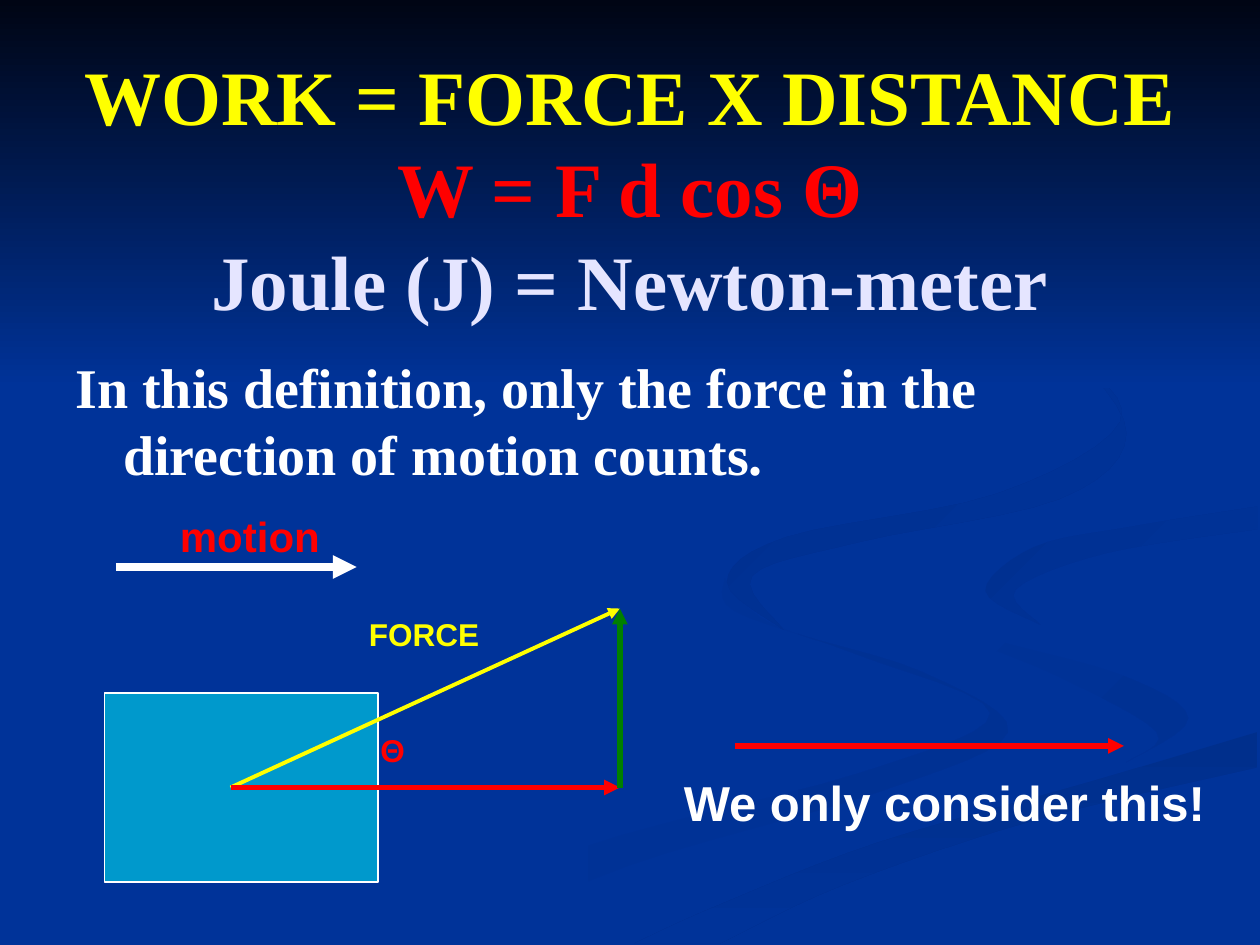
from lxml import etree
from pptx import Presentation
from pptx.dml.color import RGBColor
from pptx.enum.shapes import MSO_CONNECTOR, MSO_SHAPE
from pptx.enum.text import MSO_ANCHOR, MSO_AUTO_SIZE, PP_ALIGN
from pptx.oxml.ns import qn
from pptx.util import Pt

STRAIGHT = MSO_CONNECTOR.STRAIGHT
RECTANGLE = MSO_SHAPE.RECTANGLE
MIDDLE, TOP = MSO_ANCHOR.MIDDLE, MSO_ANCHOR.TOP
FIT_NONE = MSO_AUTO_SIZE.NONE
CENTER, LEFT = PP_ALIGN.CENTER, PP_ALIGN.LEFT

PX = 9144
WIDTH, HEIGHT = 1000, 750
CURVE_STEPS = 6
SERIF, SANS = "Times New Roman", "Arial"
BLUE, RED, YELLOW, WHITE, GREEN = "003399", "FF0000", "FFFF00", "FFFFFF", "008000"

TITLE_BOX = (50, 30, 900, 237)
TITLE_LINES = [
    ("WORK = FORCE X DISTANCE", YELLOW),
    ("W = F d cos Θ", RED),
    ("Joule (J) = Newton-meter", "E5E5FF"),
]
BODY = ("In this definition, only the force in the direction of motion counts.",
        (50, 275, 900, 125), SERIF, 32, WHITE, 20, 38)
LABELS = [
    ("motion", (133, 400, 183, 50), SANS, 24, RED, 50, 0),
    ("We only consider this!", (533, 608, 467, 57), SANS, 28, WHITE, 50, 0),
    ("Θ", (292, 575, 50, 40), SANS, 18, RED, 50, 0),
    ("FORCE", (283, 483, 108, 40), SANS, 18, YELLOW, 50, 0),
]
BLOCK = (83, 550, 217, 150)
ORIGIN, CORNER, TIP = (183, 625), (492, 625), (492, 483)
ARROWS = [
    (ORIGIN, TIP, YELLOW, 2.25),
    (ORIGIN, CORNER, RED, 3),
    (CORNER, TIP, GREEN, 3),
    ((92, 450), (283, 450), WHITE, 4.5),
    ((583, 592), (892, 592), RED, 3),
]
BAND = ((0, 0, WIDTH, 308), ("000514", BLUE), 90)
RIBBONS = [
    ((BLUE, "003193"), 0,
     [(575, 459), (614, 496), (731, 533), (800, 581), (699, 628), (499, 687), (361, 749)],
     [(300, 749), (458, 674), (684, 613), (786, 566), (679, 519), (583, 485), (575, 459)]),
    ((BLUE, "003193"), 45,
     [(724, 464), (758, 498), (888, 535), (943, 570), (894, 605)],
     [(894, 605), (918, 581), (838, 536), (739, 494), (724, 464)]),
    (("002F8C", BLUE), 90,
     [(503, 749), (569, 719), (696, 669), (867, 620), (998, 581)],
     [(998, 609), (821, 651), (670, 702), (571, 749)]),
    (("003091", BLUE), 45,
     [(826, 496), (782, 469), (821, 434), (898, 418), (998, 402)],
     [(998, 420), (878, 439), (806, 468), (826, 496)]),
    (("002F8E", BLUE), 45,
     [(762, 233), (843, 275), (894, 344), (841, 396), (683, 430), (597, 457), (622, 500)],
     [(622, 500), (577, 462), (625, 426), (791, 392), (889, 335), (846, 279), (762, 233)]),
]


def color(value):
    return RGBColor.from_string(value)


def scaled(values):
    return [value * PX for value in values]


def assign(target, values):
    for name, value in values.items():
        setattr(target, name, value)


def paint(shape, colors, angle=0):
    shape.shadow.inherit = False
    shape.line.fill.background()
    if len(colors) == 1:
        shape.fill.solid()
        shape.fill.fore_color.rgb = color(colors[0])
        return
    shape.fill.gradient()
    shape.fill.gradient_angle = (360 - angle) % 360
    for stop, value in zip(shape.fill.gradient_stops, colors):
        stop.color.rgb = color(value)


def add_span(para, text, font, size, value):
    span = para.add_run()
    span.text = text
    assign(span.font, {"name": font, "size": Pt(size), "bold": True})
    span.font.color.rgb = color(value)


def smooth_edge(points):
    padded = [points[0], *points, points[-1]]
    edge = []
    for quad in zip(padded, padded[1:], padded[2:], padded[3:]):
        for step in range(CURVE_STEPS):
            t = step / CURVE_STEPS
            edge.append(tuple(
                b + t * (c - a + t * (2 * a - 5 * b + 4 * c - d + t * (3 * b - a - 3 * c + d))) / 2
                for a, b, c, d in zip(*quad)))
    return edge + [points[-1]]


def add_ribbon(page, colors, angle, outward, back):
    outline = smooth_edge(outward) + smooth_edge(back)
    builder = page.shapes.build_freeform(*scaled(outline[0]), scale=1)
    builder.add_line_segments([scaled(point) for point in outline[1:]], close=True)
    paint(builder.convert_to_shape(), colors, angle)


def add_label(page, text, place, font, size, value, before, hang):
    box = page.shapes.add_textbox(*scaled(place))
    assign(box.text_frame, {"word_wrap": True, "auto_size": FIT_NONE, "vertical_anchor": TOP})
    para = box.text_frame.paragraphs[0]
    para.alignment = LEFT
    add_span(para, text, font, size, value)
    props = para._p.get_or_add_pPr()
    props.set("marL", str(hang * PX))
    props.set("indent", str(-hang * PX))
    spacing = etree.SubElement(props, qn("a:spcBef"))
    etree.SubElement(spacing, qn("a:spcPct")).set("val", str(before * 1000))


def add_arrow(page, start, end, value, width):
    arrow = page.shapes.add_connector(STRAIGHT, *scaled(start + end))
    arrow.line.color.rgb = color(value)
    arrow.line.width = Pt(width)
    etree.SubElement(arrow.line._get_or_add_ln(), qn("a:tailEnd")).set("type", "triangle")
    etree.SubElement(arrow._element.spPr, qn("a:effectLst"))


def add_title(page):
    title = page.shapes.title
    title.element.getparent().append(title.element)
    assign(title, dict(zip(("left", "top", "width", "height"), scaled(TITLE_BOX))))
    assign(title.text_frame, {"word_wrap": True, "auto_size": FIT_NONE,
                              "vertical_anchor": MIDDLE})
    para = title.text_frame.paragraphs[0]
    para.alignment = CENTER
    for index, (text, value) in enumerate(TITLE_LINES):
        if index:
            para.add_line_break()
        add_span(para, text, SERIF, 44, value)


def main():
    deck = Presentation()
    assign(deck, {"slide_width": WIDTH * PX, "slide_height": HEIGHT * PX})
    page = deck.slides.add_slide(deck.slide_layouts[5])
    page.background.fill.solid()
    page.background.fill.fore_color.rgb = color(BLUE)
    for ribbon in RIBBONS:
        add_ribbon(page, *ribbon)
    place, colors, angle = BAND
    paint(page.shapes.add_shape(RECTANGLE, *scaled(place)), colors, angle)
    add_title(page)
    add_label(page, *BODY)
    block = page.shapes.add_shape(RECTANGLE, *scaled(BLOCK))
    paint(block, ("0099CC",))
    block.line.color.rgb = color(WHITE)
    block.line.width = Pt(0.75)
    for arrow in ARROWS:
        add_arrow(page, *arrow)
    for label in LABELS:
        add_label(page, *label)
    deck.save("out.pptx")


if __name__ == "__main__":
    main()
